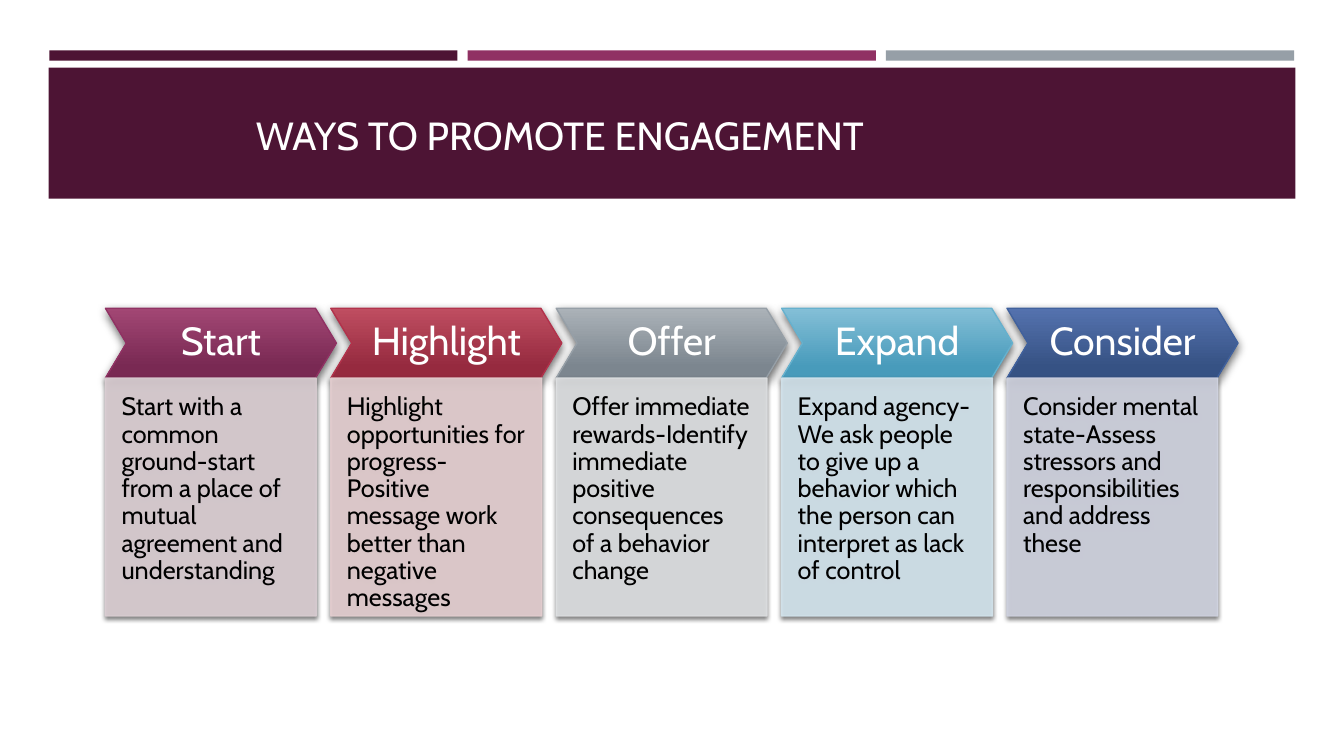
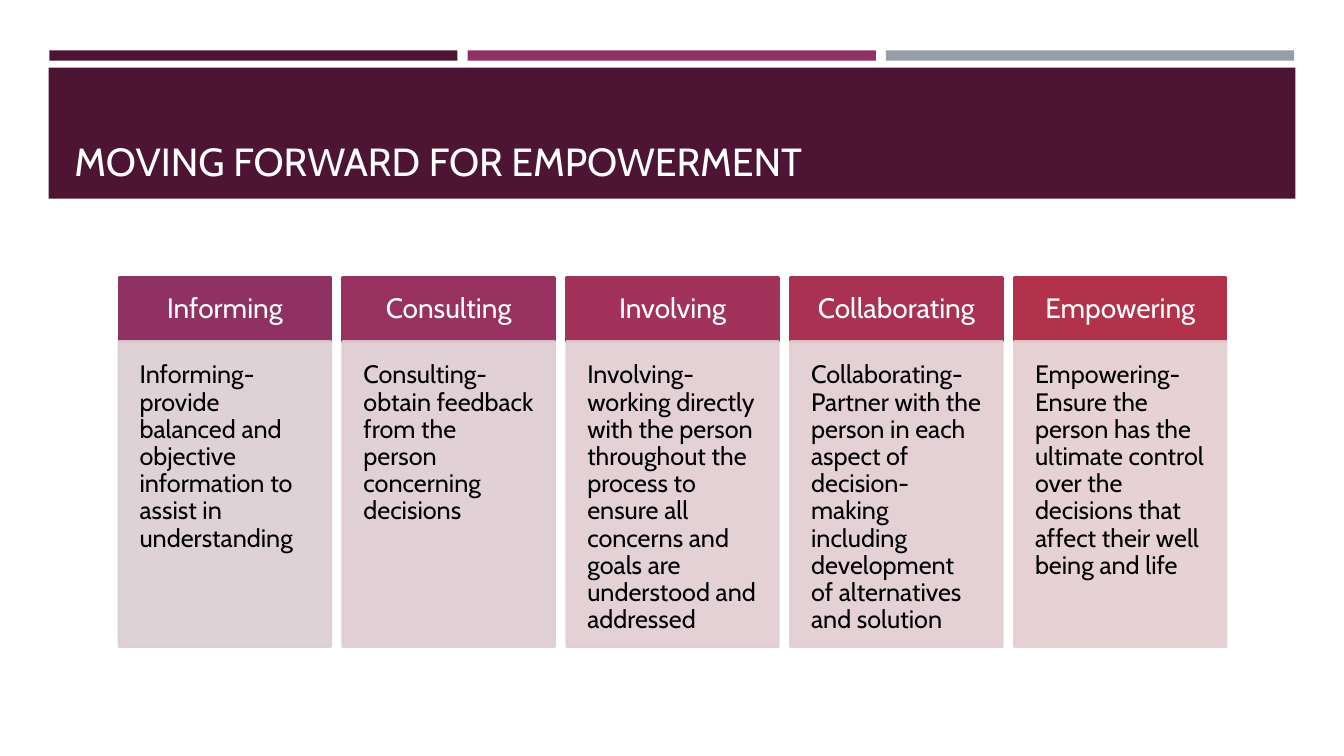
from dataclasses import dataclass

from lxml import etree
from pptx import Presentation
from pptx.dml import color
from pptx.enum import shapes, text
from pptx.oxml import ns
from pptx.util import Pt


@dataclass(frozen=True)
class Theme:
    font: str = "Cabin"
    plum: str = "4D1434"
    bars: tuple = ("4D1434", "903163", "969FA7")
    white: str = "FFFFFF"
    black: str = "000000"
    title: int = 28
    step: int = 28
    head: int = 20
    body: int = 18
    lead: float = 0.9
    alpha: int = 90


def rgb(code):
    return color.RGBColor.from_string(code)


class Deck:
    def __init__(self, theme):
        self.theme = theme
        self.file = Presentation()
        self.file.slide_width, self.file.slide_height = Pt(960), Pt(540)
        self.slide = None

    def page(self, title, box):
        self.slide = self.file.slides.add_slide(self.file.slide_layouts[6])
        for i, fill in enumerate(self.theme.bars):
            self.shape((35.2 + 298.8 * i, 36, 291.6, 7.4), fill)
        self.shape((34.8, 48.3, 890.6, 93.6), self.theme.plum)
        item = self.slide.shapes.add_textbox(*map(Pt, box))
        self.label(item, title, self.theme.title, self.theme.white,
                   (7.2, 3.6, 7.2, 3.6), anchor=text.MSO_ANCHOR.BOTTOM, lead=1)

    def shape(self, box, fill, line=None, width=1, kind=shapes.MSO_SHAPE.RECTANGLE):
        item = self.slide.shapes.add_shape(kind, *map(Pt, box))
        item.shadow.inherit = False
        if isinstance(fill, tuple):
            item.fill.gradient()
            item.fill.gradient_angle = 270
            for stop, code, place in zip(item.fill.gradient_stops, fill, (0, 0.84)):
                stop.color.rgb = rgb(code)
                stop.position = place
        else:
            item.fill.solid()
            item.fill.fore_color.rgb = rgb(fill)
        if line:
            item.line.color.rgb = rgb(line)
            item.line.width = Pt(width)
        else:
            item.line.fill.background()
        return item

    def fade(self, item):
        for tone in item.element.spPr.iter(ns.qn("a:srgbClr")):
            etree.SubElement(tone, ns.qn("a:alpha"), val=str(self.theme.alpha * 1000))

    def shade(self, item, alpha, blur, gap, angle):
        root = item.element.spPr.find(ns.qn("a:effectLst"))
        cast = etree.SubElement(
            root, ns.qn("a:outerShdw"), blurRad=str(Pt(blur)), dist=str(Pt(gap)),
            dir=str(angle * 60000), rotWithShape="0")
        tone = etree.SubElement(cast, ns.qn("a:srgbClr"), val=self.theme.black)
        etree.SubElement(tone, ns.qn("a:alpha"), val=str(alpha * 1000))

    def label(self, item, words, size, ink, pad, align=text.PP_ALIGN.LEFT,
              anchor=text.MSO_ANCHOR.MIDDLE, lead=None):
        frame = item.text_frame
        frame.word_wrap = True
        frame.vertical_anchor = anchor
        (frame.margin_left, frame.margin_top,
         frame.margin_right, frame.margin_bottom) = map(Pt, pad)
        para = frame.paragraphs[0]
        para.alignment = align
        para.line_spacing = lead or self.theme.lead
        run = para.add_run()
        run.text = words
        run.font.name = self.theme.font
        run.font.size = Pt(size)
        run.font.color.rgb = rgb(ink)

    def head(self, item, words, size, pad):
        self.label(item, words, size, self.theme.white, (pad,) * 4,
                   align=text.PP_ALIGN.CENTER)

    def body(self, box, words, fill, width, pad):
        item = self.shape(box, fill, fill, width)
        self.fade(item)
        self.label(item, words, self.theme.body, self.theme.black, pad,
                   anchor=text.MSO_ANCHOR.TOP)
        return item

    def step(self, left, name, words, fill, line, pale):
        item = self.shape((left, 220.2, 165, 49.8), fill, line,
                          kind=shapes.MSO_SHAPE.CHEVRON)
        item.adjustments[0] = 0.3
        self.shade(item, 60, 7, 3, 84)
        self.head(item, name, self.theme.step, 5.8)
        item = self.body((left, 270, 150.6, 170), words, pale, 1,
                         (11.5, 11.5, 11.5, 24))
        self.shade(item, 55, 3, 2, 90)

    def card(self, left, name, words, fill, pale):
        item = self.shape((left, 198.2, 151.4, 45.6), fill, fill, 1.75)
        self.head(item, name, self.theme.head, 12)
        self.body((left, 243.8, 151.4, 218.2), words, pale, 1.75, (14.8,) * 4)


STEPS = (
    ("Start", "Start with a common ground-start from a place of mutual "
     "agreement and understanding", ("A24774", "792953"), "903163", "DBCED3"),
    ("Highlight", "Highlight opportunities for progress- Positive message work "
     "better than negative messages", ("BF4E61", "962A3F"), "B2324B", "E4CED0"),
    ("Offer", "Offer immediate rewards-Identify immediate positive consequences "
     "of a behavior change", ("ABB2B8", "7C868F"), "969FA7", "DDDFE1"),
    ("Expand", "Expand agency-We ask people to give up a behavior which the "
     "person can interpret as lack of control",
     ("84BFD7", "489BBB"), "66B1CE", "D3E4ED"),
    ("Consider", "Consider mental state-Assess stressors and responsibilities "
     "and address these", ("5472AE", "365284"), "40619D", "CFD2DF"),
)

CARDS = (
    ("Informing", "Informing-provide balanced and objective information to "
     "assist in understanding", "903163", "DBCED3"),
    ("Consulting", "Consulting-obtain feedback from the person concerning "
     "decisions", "98315F", "DECDD2"),
    ("Involving", "Involving-working directly with the person throughout the "
     "process to ensure all concerns and goals are understood and addressed",
     "A1325A", "E0CDD2"),
    ("Collaborating", "Collaborating-Partner with the person in each aspect of "
     "decision- making including development of alternatives and solution",
     "A93253", "E2CDD1"),
    ("Empowering", "Empowering-Ensure the person has the ultimate control over "
     "the decisions that affect their well being and life", "B2324B", "E4CED0"),
)


def main():
    deck = Deck(Theme())
    deck.page("WAYS TO PROMOTE ENGAGEMENT", (175.7, 75.6, 608.4, 41))
    for i, step in enumerate(STEPS):
        deck.step(75.3 + 161 * i, *step)
    deck.page("MOVING FORWARD FOR EMPOWERMENT", (46.1, 55.4, 868.3, 79.9))
    for i, card in enumerate(CARDS):
        deck.card(84.9 + 159.9 * i, *card)
    deck.file.save("out.pptx")


if __name__ == "__main__":
    main()
